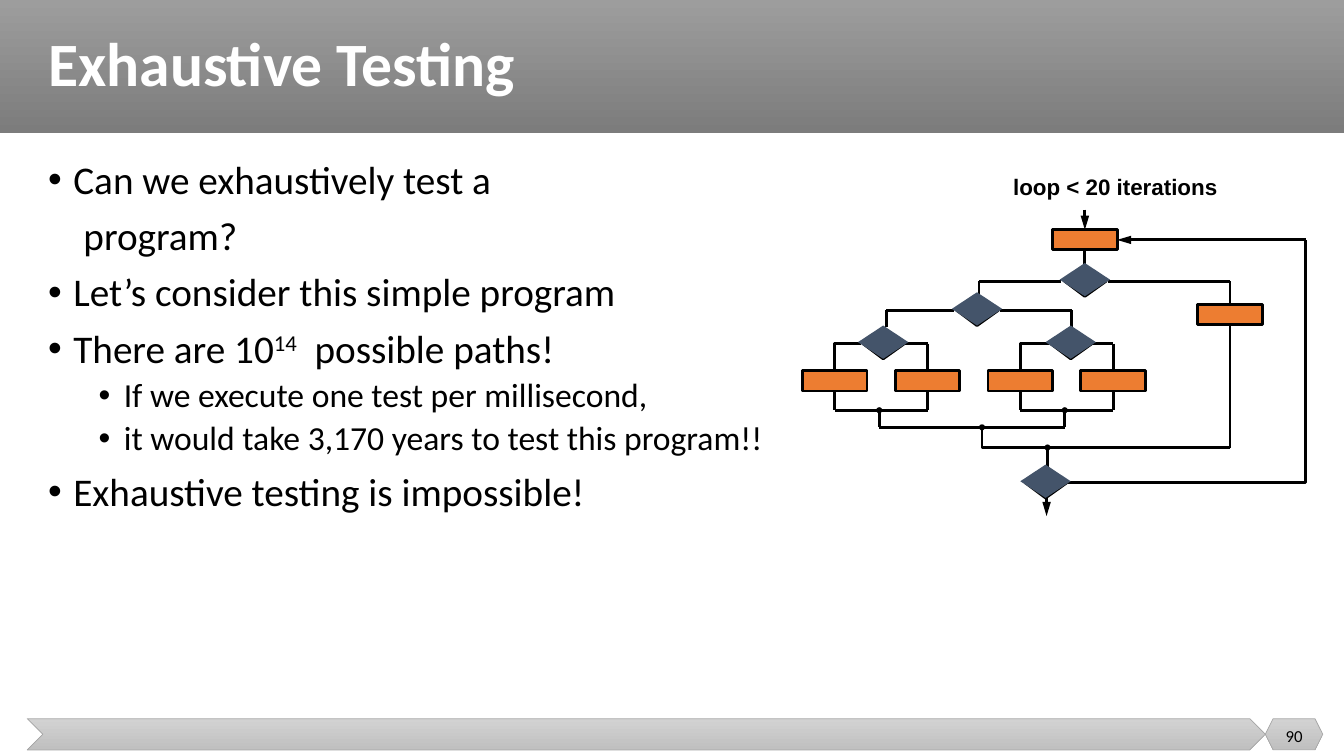
from dataclasses import dataclass
from itertools import pairwise
from lxml import etree
from pptx import Presentation
from pptx import util as u
from pptx.dml.color import RGBColor as Rgb
from pptx.enum import shapes, text
from pptx.oxml.ns import qn


@dataclass
class Theme:
    ink: Rgb = Rgb(0, 0, 0)
    white: Rgb = Rgb(255, 255, 255)
    box: Rgb = Rgb(0xED, 0x7D, 0x31)
    test: Rgb = Rgb(0x44, 0x54, 0x6A)
    edge: Rgb = Rgb(0xA5, 0xA5, 0xA5)
    head: tuple = (Rgb(0x9D, 0x9D, 0x9D), Rgb(0x7C, 0x7C, 0x7C))
    foot: tuple = (Rgb(0xD2, 0xD2, 0xD2), Rgb(0xC0, 0xC0, 0xC0))
    main: str = "Calibri"
    label: str = "Arial"
    title: int = 44
    body: int = 28
    sub: int = 24
    note: int = 16
    page: int = 12
    wire: int = 2


theme = Theme()
PX = 9144  # 100 px to the inch
kind = shapes.MSO_SHAPE

deck = Presentation()
deck.slide_width, deck.slide_height = 1333 * PX, 750 * PX
slide = deck.slides.add_slide(deck.slide_layouts[5])
parts = slide.shapes


def put(form, x, y, w, h, fill=None):
    """Add a flat shape without outline."""
    item = parts.add_shape(form, x * PX, y * PX, w * PX, h * PX)
    item.shadow.inherit = False
    item.line.fill.background()
    if fill is not None:
        item.fill.solid()
        item.fill.fore_color.rgb = fill
    return item


def write(para, words, size, color=theme.ink, font=theme.main, bold=False):
    """Add one run of text."""
    run = para.add_run()
    run.text = words
    run.font.size, run.font.name, run.font.bold = u.Pt(size), font, bold
    run.font.color.rgb = color
    return run


# Header and footer bands
bands = []
for form, x, y, w, h, tones in (
    (kind.RECTANGLE, 0, 0, 1333, 132, theme.head),
    (kind.CHEVRON, 27, 713, 1228, 31, theme.foot),
    (kind.HEXAGON, 1255, 713, 57, 31, theme.foot),
):
    band = put(form, x, y, w, h)
    band.fill.gradient()
    band.fill.gradient_angle = 270
    for stop, tone in zip(band.fill.gradient_stops, tones):
        stop.color.rgb = tone
    if tones == theme.foot:
        band.line.color.rgb = theme.edge
        band.line.width = u.Pt(0.5)
    bands.append(band)

# Title
title = parts.title
title.element.addprevious(bands[0].element)
title.left, title.top, title.width, title.height = 38 * PX, 0, 1274 * PX, 132 * PX
title.text_frame.vertical_anchor = text.MSO_ANCHOR.MIDDLE
para = title.text_frame.paragraphs[0]
para.alignment, para.line_spacing = text.PP_ALIGN.LEFT, 0.9
write(para, "Exhaustive Testing", theme.title, theme.white, bold=True)

# Bullet text: level, bullet, runs (odd runs are raised)
points = (
    (0, True, ["Can we exhaustively test a"]),
    (0, False, ["program?"]),
    (0, True, ["Let’s consider this simple program"]),
    (0, True, ["There are 10", "14", "  possible paths!"]),
    (1, True, ["If we execute one test per millisecond,"]),
    (1, True, ["it would take 3,170 years to test this program!!"]),
    (0, True, ["Exhaustive testing is impossible!"]),
)
frame = parts.add_textbox(38 * PX, 154 * PX, 1274 * PX, 519 * PX).text_frame
frame.word_wrap = True
for i, (level, mark, runs) in enumerate(points):
    para = frame.add_paragraph() if i else frame.paragraphs[0]
    para.level, para.line_spacing = level, 0.9
    para.space_before = u.Pt((5 if level else 10) if i else 0)
    props = para._p.get_or_add_pPr()
    props.set("marL", str((25 + 50 * level if mark else 35) * PX))
    props.set("indent", str(-25 * PX if mark else 0))
    if mark:
        etree.SubElement(props, qn("a:buFont")).set("typeface", "Arial")
        etree.SubElement(props, qn("a:buChar")).set("char", "•")
    for j, words in enumerate(runs):
        run = write(para, words, theme.sub if level else theme.body)
        if j % 2:
            run._r.get_or_add_rPr().set("baseline", "30000")

# Flowchart label
frame = parts.add_textbox(995 * PX, 167 * PX, 225 * PX, 37 * PX).text_frame
frame.word_wrap = False
write(frame.paragraphs[0], "loop < 20 iterations", theme.note, font=theme.label, bold=True)

# Statement boxes, placed by centre; ports holds their joining points
pairs = ((828, 876, 872), (1012, 1062, 1056))  # left leaf, test, dot
leaves = [(left + step, 378) for left, _, _ in pairs for step in (0, 92)]
ports = {}
for x, y in [(1076, 238), (1220, 312), *leaves]:
    box = put(kind.RECTANGLE, x - 32, y - 10, 64, 20, theme.box)
    box.line.color.rgb, box.line.width = theme.ink, u.Pt(theme.wire)
    sides = ((x, y - 10), (x - 32, y), (x, y + 10), (x + 32, y))
    ports.update({spot: (box, site) for site, spot in enumerate(sides)})

# Routes of straight lines, and bent outlines
routes = [
    [(1076, 248), (1076, 262)],
    [(1052, 279), (971, 279), (971, 294)],
    [(1099, 279), (1220, 279), (1220, 302)],
    [(946, 308), (879, 308), (879, 324)],
    [(992, 308), (1063, 308), (1063, 324)],
    [(872, 407), (872, 424), (1056, 424), (1056, 407)],
    [(1220, 322), (1220, 444), (1039, 444), (1039, 463)],
]
bends = [
    [(974, 424), (974, 444), (1038, 444)],
    [(1059, 479), (1295, 479), (1295, 238)],
]
for left, test, _ in pairs:
    right = left + 92
    bends.append([(test - 22, 341), (left, 341), (left, 368)])
    routes.append([(test + 22, 341), (right, 341), (right, 368)])
    routes.append([(left, 388), (left, 407), (right, 407), (right, 388)])
arrows = [
    ((1076, 208), (1076, 228)),
    ((1295, 238), (1108, 238)),
    ((1038, 493), (1038, 512)),
]

# Lines and arrows
for a, b in [*(leg for route in routes for leg in pairwise(route)), *arrows]:
    wire = parts.add_connector(shapes.MSO_CONNECTOR.STRAIGHT, *(n * PX for n in a + b))
    wire.line.color.rgb, wire.line.width = theme.ink, u.Pt(theme.wire)
    if a in ports:
        wire.begin_connect(*ports[a])
    if b in ports:
        wire.end_connect(*ports[b])
    if (a, b) in arrows:
        tip = etree.SubElement(wire.line._get_or_add_ln(), qn("a:tailEnd"))
        tip.set("type", "triangle")
        tip.set("len", "lg")
    etree.SubElement(wire.element.spPr, qn("a:effectLst"))

# Bends, and the dark rims under the decisions
tests = [(1076, 278), (969, 307), (1037, 478), *((test, 340) for _, test, _ in pairs)]
rims = [[(x - 20, y + 1), (x, y - 14), (x + 21, y + 1), (x, y + 16)] for x, y in tests]
for trace in bends + rims:
    pen = parts.build_freeform(*trace[0], scale=PX)
    pen.add_line_segments(trace[1:], close=trace in rims)
    bend = pen.convert_to_shape()
    bend.shadow.inherit = False
    bend.fill.background()
    bend.line.color.rgb, bend.line.width = theme.ink, u.Pt(theme.wire)

# Decisions and junction dots
for x, y in tests:
    put(kind.DIAMOND, x - 25, y - 17, 50, 33, theme.test)
for x, y in [(974, 424), (1039, 444), *((dot, 407) for _, _, dot in pairs)]:
    put(kind.OVAL, x - 3, y - 3, 6, 6, theme.ink)

# Page number
frame = parts.add_textbox(1255 * PX, 710 * PX, 57 * PX, 40 * PX).text_frame
frame.word_wrap = True
frame.vertical_anchor = text.MSO_ANCHOR.MIDDLE
frame.paragraphs[0].alignment = text.PP_ALIGN.CENTER
write(frame.paragraphs[0], "90", theme.page)

deck.save("out.pptx")
